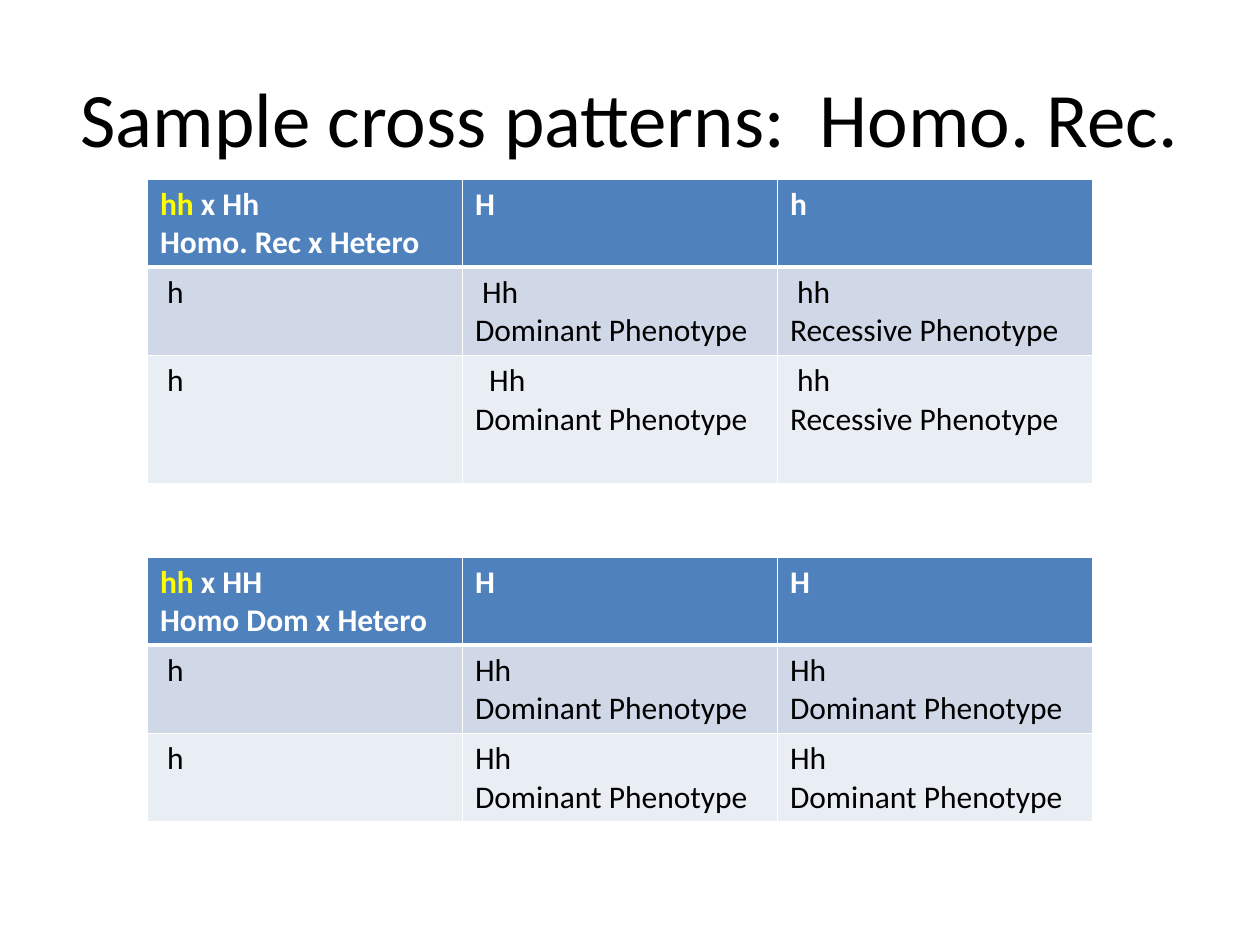
from dataclasses import dataclass

from lxml.etree import SubElement
from pptx import Presentation
from pptx.dml.color import RGBColor
from pptx.enum.text import MSO_ANCHOR, PP_ALIGN
from pptx.oxml.ns import qn
from pptx.util import Inches, Pt


@dataclass(frozen=True)
class Theme:
    font: str = "Calibri"
    title_size: int = 44
    cell_size: int = 18
    text: str = "000000"
    header_text: str = "FFFFFF"
    highlight: str = "FFFF00"
    header_fill: str = "4F81BD"
    bands: tuple = ("D0D8E8", "E9EDF4")
    border: str = "FFFFFF"
    thin: int = 1
    thick: int = 3


class SlideBuilder:
    def __init__(self, slide, theme):
        self.s = slide
        self.theme = theme

    def format_run(self, r, size, color, bold=False):
        r.font.name = self.theme.font
        r.font.size = Pt(size)
        r.font.bold = bold
        r.font.color.rgb = RGBColor.from_string(color)

    def title(self, text, left, top, width, height):
        sp = self.s.shapes.add_textbox(Inches(left), Inches(top), Inches(width), Inches(height))
        tf = sp.text_frame
        tf.word_wrap = True
        tf.vertical_anchor = MSO_ANCHOR.MIDDLE
        tf.text = text
        p = tf.paragraphs[0]
        p.alignment = PP_ALIGN.CENTER
        self.format_run(p.runs[0], self.theme.title_size, self.theme.text)

    def borders(self, cell, top, bottom):
        """Draw the four cell borders; left and right are always thin."""
        tc_pr = cell._tc.get_or_add_tcPr()
        thin = self.theme.thin
        widths = {"a:lnL": thin, "a:lnR": thin, "a:lnT": top, "a:lnB": bottom}
        for i, (tag, width) in enumerate(widths.items()):
            ln = SubElement(tc_pr, qn(tag), w=str(Pt(width)))
            fill = SubElement(ln, qn("a:solidFill"))
            SubElement(fill, qn("a:srgbClr"), val=self.theme.border)
            tc_pr.insert(i, ln)  # borders must precede the cell fill

    def cell(self, cell, text, row):
        th = self.theme
        header = row == 0
        cell.fill.solid()
        cell.fill.fore_color.rgb = RGBColor.from_string(
            th.header_fill if header else th.bands[(row - 1) % 2])
        self.borders(cell, th.thick if row == 1 else th.thin, th.thick if header else th.thin)
        cell.text_frame.text = text
        for p in cell.text_frame.paragraphs:
            for r in p.runs:
                self.format_run(r, th.cell_size, th.header_text if header else th.text, header)

    def cross_table(self, parent, partner, rows, left, top, width, heights):
        """Add a Punnett square whose corner highlights the first parent."""
        n_cols = len(rows[0])
        frame = self.s.shapes.add_table(len(rows), n_cols, Inches(left), Inches(top),
                                        Inches(width), Inches(sum(heights)))
        table = frame.table
        table.first_row = table.horz_banding = False
        for col in table.columns:
            col.width = Inches(width / n_cols)
        for i, (texts, height) in enumerate(zip(rows, heights)):
            table.rows[i].height = Inches(height)
            for j, text in enumerate(texts):
                self.cell(table.cell(i, j), text, i)

        p = table.cell(0, 0).text_frame.paragraphs[0]
        p.text = parent
        self.format_run(p.runs[0], self.theme.cell_size, self.theme.highlight, True)
        r = p.add_run()
        r.text = f" x {partner}"
        self.format_run(r, self.theme.cell_size, self.theme.header_text, True)


def main():
    prs = Presentation()
    prs.slide_width, prs.slide_height = Inches(10), Inches(7.5)
    builder = SlideBuilder(prs.slides.add_slide(prs.slide_layouts[6]), Theme())

    dominant = "Hh\nDominant Phenotype"
    recessive = " hh\nRecessive Phenotype"
    hetero_rows = [
        ["\nHomo. Rec x Hetero", "H", "h"],
        [" h", " " + dominant, recessive],
        [" h", "  " + dominant, recessive],
    ]
    dominant_rows = [
        ["\nHomo Dom x Hetero", "H", "H"],
        [" h", dominant, dominant],
        [" h", dominant, dominant],
    ]

    builder.title("Sample cross patterns:  Homo. Rec. ", 0.5, 0.3, 9, 1.25)
    builder.cross_table("hh", "Hh", hetero_rows, 1.17, 1.42, 7.5, [0.7, 0.7, 1.02])
    builder.cross_table("hh", "HH", dominant_rows, 1.17, 4.42, 7.5, [0.7, 0.7, 0.7])
    prs.save("out.pptx")


if __name__ == "__main__":
    main()
